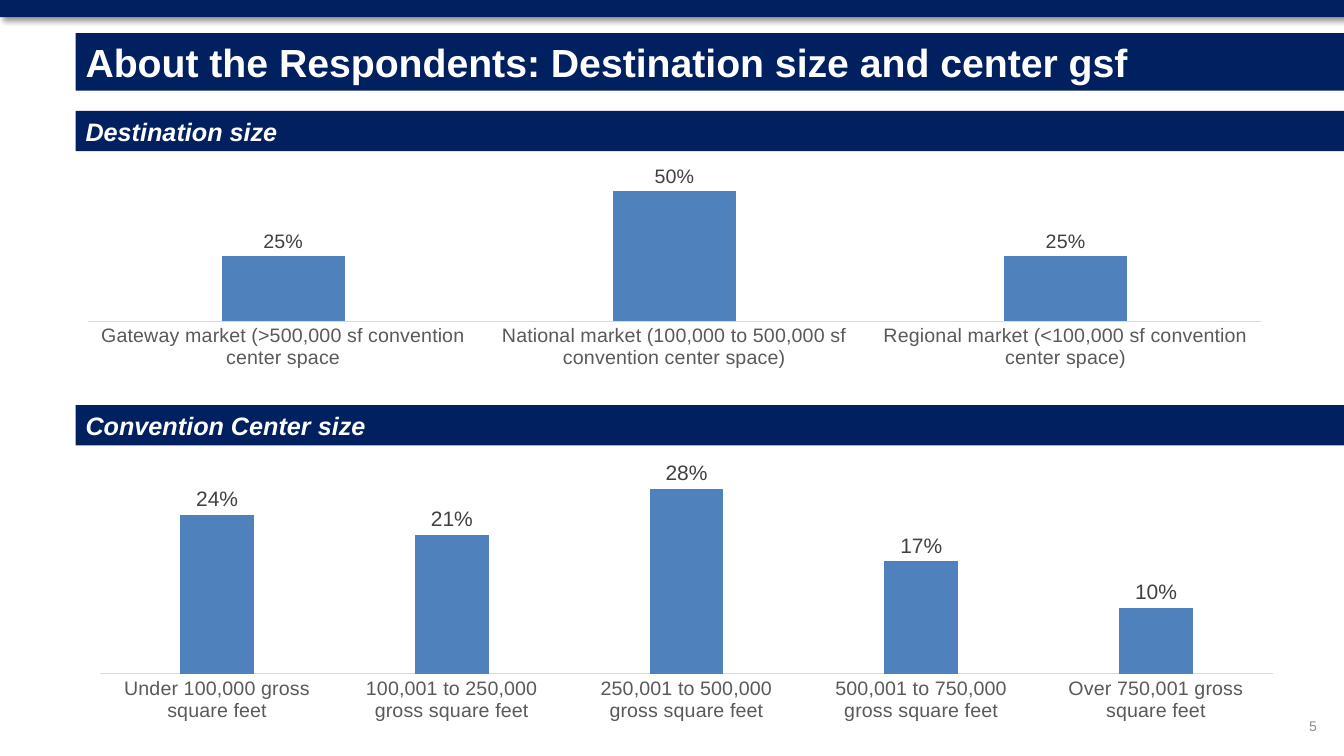
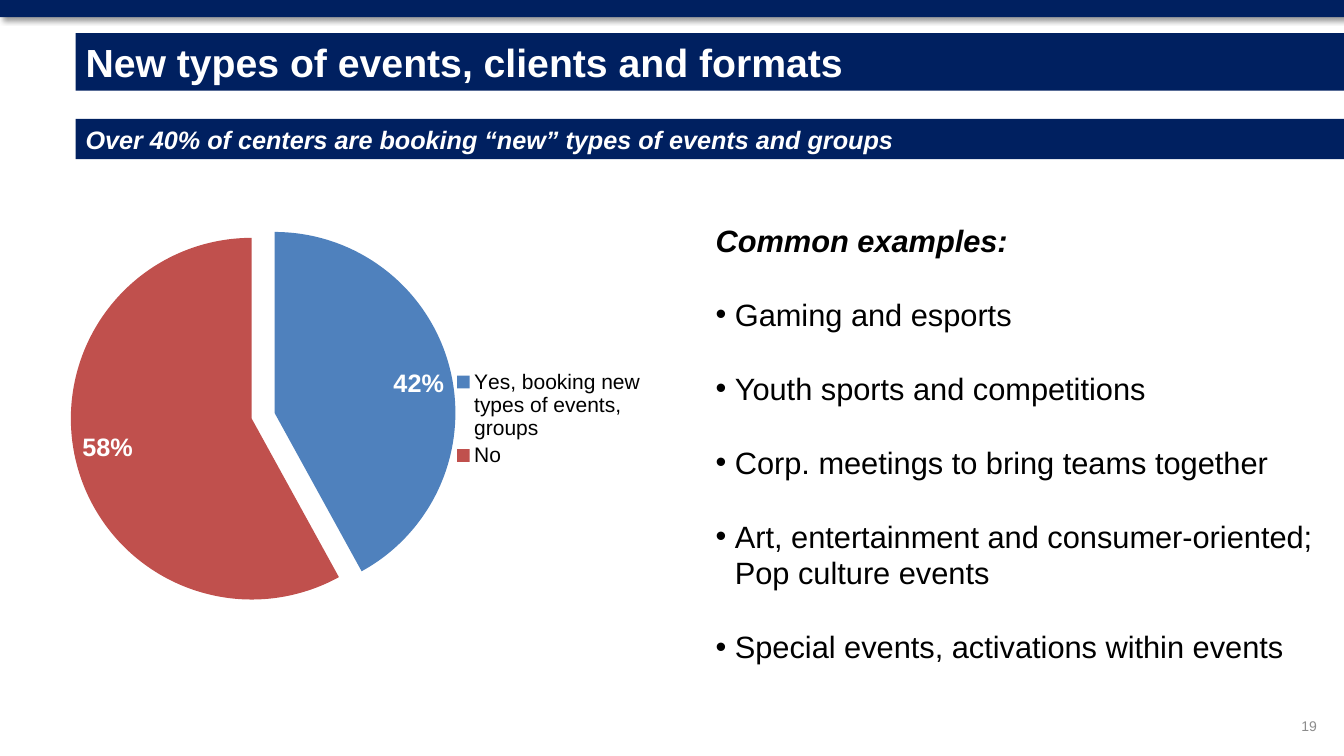
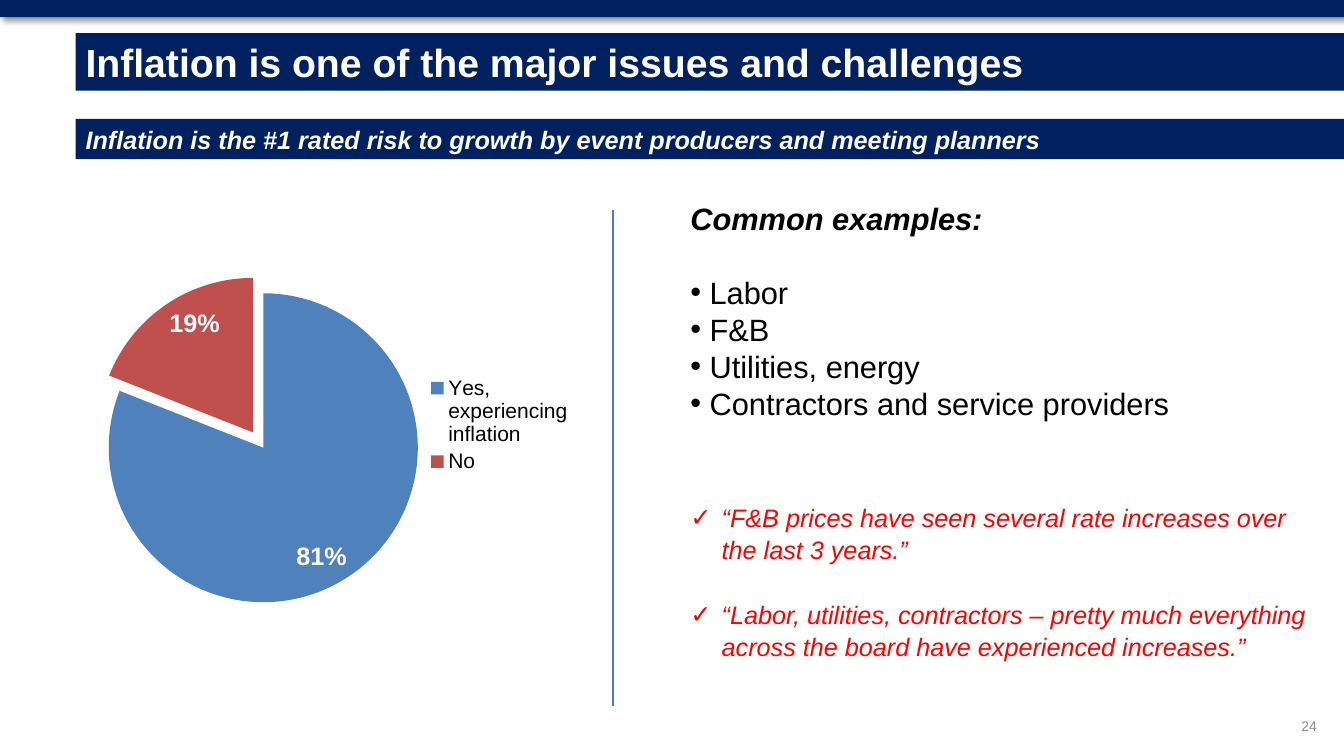
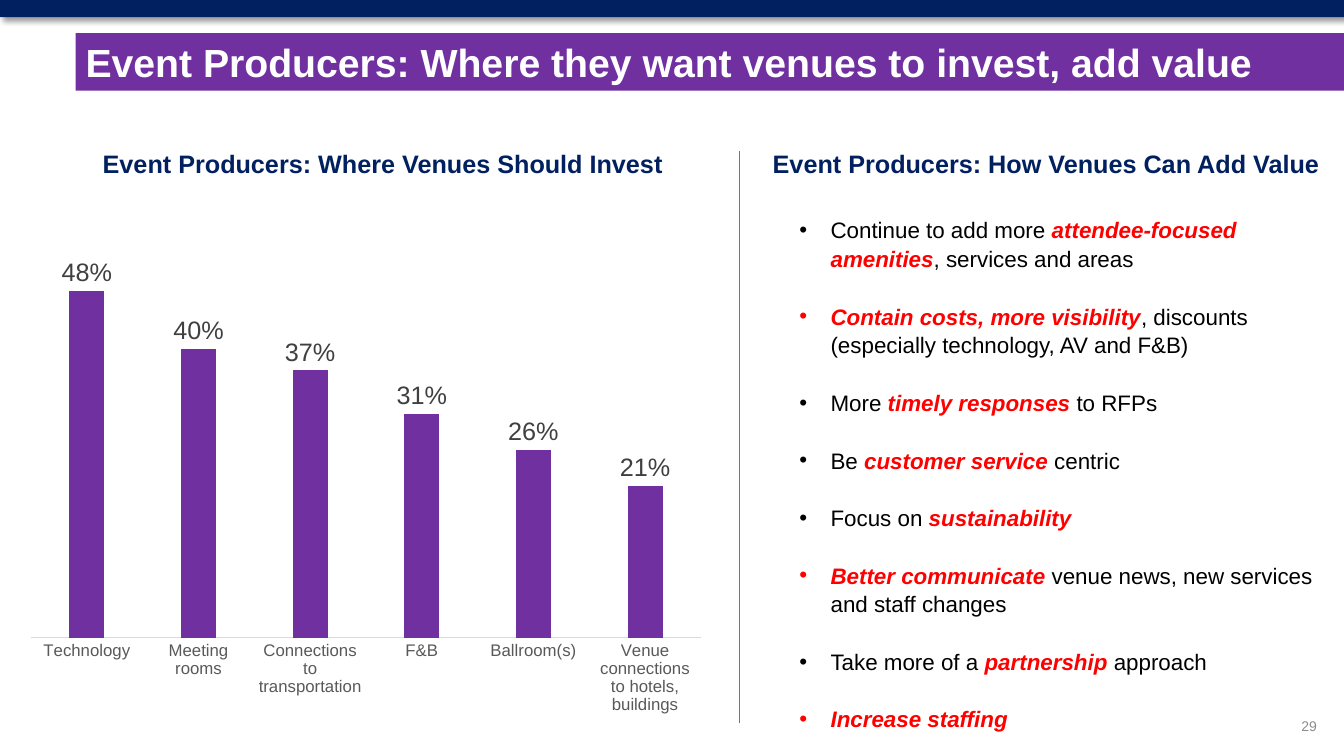
from dataclasses import dataclass

from lxml.etree import SubElement
from pptx import Presentation
from pptx.chart.data import CategoryChartData
from pptx.dml.color import RGBColor
from pptx.enum.chart import XL_CHART_TYPE, XL_LABEL_POSITION, XL_LEGEND_POSITION, XL_TICK_MARK
from pptx.enum.shapes import MSO_CONNECTOR, MSO_SHAPE
from pptx.enum.text import MSO_ANCHOR, PP_ALIGN
from pptx.oxml.ns import qn
from pptx.util import Inches, Pt

NAVY = RGBColor(0x00, 0x20, 0x60)
PURPLE = RGBColor(0x70, 0x30, 0xA0)
BLUE = RGBColor(0x4F, 0x81, 0xBD)
BRICK = RGBColor(0xC0, 0x50, 0x4D)
RULE_BLUE = RGBColor(0x4B, 0x7E, 0xBC)
RED = RGBColor(0xFF, 0x00, 0x00)
BLACK = RGBColor(0x00, 0x00, 0x00)
WHITE = RGBColor(0xFF, 0xFF, 0xFF)
LABEL_GRAY = RGBColor(0x40, 0x40, 0x40)
AXIS_GRAY = RGBColor(0x59, 0x59, 0x59)
AXIS_LINE = RGBColor(0xD9, 0xD9, 0xD9)
NUMBER_GRAY = RGBColor(0x8C, 0x8C, 0x8C)

FONT = "Arial"
SLIDE_WIDTH = 13.33
BAND_LEFT = 0.75
BAND_HEIGHT = 0.4
LINE_HEIGHT = 1.2
LOOSE = 1.07


@dataclass
class Item:
    """A paragraph: its runs of (text, emphasised), look, and blank lines before it."""
    runs: list
    size: int = 22
    color: RGBColor = BLACK
    bold: bool = False
    italic: bool = False
    bullet: str = ""
    indent: float = 0
    spacing: float = 1
    lines_before: float = 0


def style_font(font, size, color, bold=False, italic=False):
    """Set the shared typeface with a size, colour and weight."""
    font.name = FONT
    font.size = Pt(size)
    font.color.rgb = color
    font.bold = bold
    font.italic = italic


def add_run(paragraph, text, size, color, bold=False, italic=False):
    """Append one styled run to a paragraph."""
    run = paragraph.add_run()
    run.text = text
    style_font(run.font, size, color, bold, italic)


def add_rectangle(slide, left, top, width, height, fill):
    """Add a plain filled rectangle without outline or shadow."""
    shape = slide.shapes.add_shape(
        MSO_SHAPE.RECTANGLE, Inches(left), Inches(top), Inches(width), Inches(height))
    shape.fill.solid()
    shape.fill.fore_color.rgb = fill
    shape.line.fill.background()
    shape.shadow.inherit = False
    return shape


def add_label(slide, text, left, top, width, height, fill, size, color,
              italic=False, alignment=PP_ALIGN.LEFT):
    """Add a rectangle holding one bold line of text."""
    shape = add_rectangle(slide, left, top, width, height, fill)
    frame = shape.text_frame
    frame.word_wrap = True
    frame.vertical_anchor = MSO_ANCHOR.MIDDLE
    paragraph = frame.paragraphs[0]
    paragraph.alignment = alignment
    add_run(paragraph, text, size, color, True, italic)


def add_section_band(slide, text, top):
    """Add a navy band with an italic section heading."""
    add_label(slide, text, BAND_LEFT, top, SLIDE_WIDTH - BAND_LEFT, BAND_HEIGHT,
              NAVY, 18, WHITE, italic=True)


def add_column_heading(slide, text, left, width, alignment):
    """Add a navy heading above a column of content."""
    add_label(slide, text, left, 1.42, width, BAND_HEIGHT, WHITE, 18, NAVY,
              alignment=alignment)


def add_top_strip(slide):
    """Add the navy strip with its soft shadow along the top edge."""
    strip = add_rectangle(slide, 0, 0, SLIDE_WIDTH, 0.17, NAVY)
    effects = strip._element.spPr.find(qn("a:effectLst"))
    shadow = SubElement(effects, qn("a:outerShdw"), blurRad=str(Pt(4)), dist=str(Pt(3)),
                        dir="2700000", algn="tl", rotWithShape="0")
    color = SubElement(shadow, qn("a:srgbClr"), val="000000")
    SubElement(color, qn("a:alpha"), val="40000")


def add_page_number(slide, number):
    """Add the page number at the lower right."""
    box = slide.shapes.add_textbox(Inches(10.83), Inches(7), Inches(2.33), Inches(0.4))
    frame = box.text_frame
    frame.word_wrap = True
    frame.vertical_anchor = MSO_ANCHOR.MIDDLE
    frame.paragraphs[0].alignment = PP_ALIGN.RIGHT
    add_run(frame.paragraphs[0], str(number), 10, NUMBER_GRAY)


def start_slide(presentation, title, number, fill=NAVY):
    """Add a slide with the shared strip, page number and title band."""
    slide = presentation.slides.add_slide(presentation.slide_layouts[6])
    add_top_strip(slide)
    add_page_number(slide, number)
    add_label(slide, title, BAND_LEFT, 0.33, SLIDE_WIDTH - BAND_LEFT, 0.57, fill, 28, WHITE)
    return slide


def add_text_list(slide, left, top, width, height, items):
    """Add a text box with one paragraph for each item."""
    box = slide.shapes.add_textbox(Inches(left), Inches(top), Inches(width), Inches(height))
    frame = box.text_frame
    frame.word_wrap = True
    for index, item in enumerate(items):
        paragraph = frame.add_paragraph() if index else frame.paragraphs[0]
        line = item.size * LINE_HEIGHT * item.spacing
        paragraph.line_spacing = Pt(line)
        paragraph.space_before = Pt(line * item.lines_before)
        if item.bullet:
            properties = paragraph._p.get_or_add_pPr()
            properties.set("marL", str(Inches(item.indent)))
            properties.set("indent", str(-Inches(item.indent)))
            SubElement(properties, qn("a:buFont"), typeface=FONT)
            SubElement(properties, qn("a:buChar"), char=item.bullet)
        for text, emphasised in item.runs:
            add_run(paragraph, text, item.size, RED if emphasised else item.color,
                    item.bold or emphasised, item.italic or emphasised)


def examples_heading():
    """Return the heading item of a list of examples."""
    return Item([("Common examples:", False)], bold=True, italic=True)


def example(text, lines_before):
    """Return a large bulleted item."""
    return Item([(text, False)], bullet="•", indent=0.19, lines_before=lines_before)


def quote(text, lines_before):
    """Return a red italic quotation with a check mark."""
    return Item([(text, False)], size=18, color=RED, italic=True, bullet="✓",
                indent=0.31, spacing=LOOSE, lines_before=lines_before)


def add_divider(slide, x, top, bottom):
    """Add a thin vertical rule."""
    connector = slide.shapes.add_connector(
        MSO_CONNECTOR.STRAIGHT, Inches(x), Inches(top), Inches(x), Inches(bottom))
    connector.line.color.rgb = RULE_BLUE
    connector.line.width = Pt(0.75)
    SubElement(connector._element.spPr, qn("a:effectLst"))


def set_plot_layout(chart, bounds):
    """Place the inner plot area by fractions of the chart."""
    area = chart._chartSpace.chart.plotArea
    for old_layout in area.findall(qn("c:layout")):
        area.remove(old_layout)
    layout = SubElement(area, qn("c:layout"))
    area.insert(0, layout)
    manual = SubElement(layout, qn("c:manualLayout"))
    settings = [("layoutTarget", "inner"), ("xMode", "edge"), ("yMode", "edge")]
    settings += zip("xywh", bounds)
    for name, value in settings:
        SubElement(manual, qn(f"c:{name}"), val=str(value))


def add_percent_chart(slide, chart_type, box, values, plot_bounds):
    """Add a one-series chart of shares with value labels."""
    data = CategoryChartData(number_format="0%")
    data.categories = list(values)
    data.add_series("Series 1", list(values.values()))
    chart = slide.shapes.add_chart(chart_type, *map(Inches, box), data).chart
    chart.has_title = False
    chart.has_legend = False
    style_font(chart.font, 15, BLACK)
    set_plot_layout(chart, plot_bounds)
    plot = chart.plots[0]
    plot.has_data_labels = True
    labels = plot.data_labels
    labels.show_value = True
    labels.show_percentage = False
    labels.number_format = "0%"
    labels.number_format_is_linked = False
    return chart


def add_column_chart(slide, box, values, color, maximum, label_size, axis_size, plot_bounds):
    """Add a column chart that shows only its category axis."""
    chart = add_percent_chart(slide, XL_CHART_TYPE.COLUMN_CLUSTERED, box, values, plot_bounds)
    plot = chart.plots[0]
    plot.vary_by_categories = False
    plot.gap_width = 219
    plot.overlap = -27
    plot.data_labels.position = XL_LABEL_POSITION.OUTSIDE_END
    style_font(plot.data_labels.font, label_size, LABEL_GRAY)
    fill = plot.series[0].format.fill
    fill.solid()
    fill.fore_color.rgb = color
    value_axis = chart.value_axis
    value_axis.minimum_scale = 0
    value_axis.maximum_scale = maximum
    value_axis.has_major_gridlines = False
    value_axis.visible = False
    category_axis = chart.category_axis
    category_axis.major_tick_mark = XL_TICK_MARK.NONE
    category_axis.format.line.color.rgb = AXIS_LINE
    category_axis.format.line.width = Pt(0.75)
    style_font(category_axis.tick_labels.font, axis_size, AXIS_GRAY)


def add_pie_chart(slide, box, values, exploded, explosion, plot_bounds):
    """Add a two-part pie with one slice pulled out and a legend."""
    chart = add_percent_chart(slide, XL_CHART_TYPE.PIE, box, values, plot_bounds)
    plot = chart.plots[0]
    plot.vary_by_categories = True
    plot.data_labels.position = XL_LABEL_POSITION.INSIDE_END
    style_font(plot.data_labels.font, 18, WHITE, bold=True)
    for index, color in enumerate((BLUE, BRICK)):
        point = plot.series[0].points[index]
        point.format.fill.solid()
        point.format.fill.fore_color.rgb = color
    slice_element = plot.series[0]._element.findall(qn("c:dPt"))[exploded]
    explosion_element = SubElement(slice_element, qn("c:explosion"), val=str(explosion))
    slice_element.find(qn("c:spPr")).addprevious(explosion_element)
    chart.has_legend = True
    chart.legend.position = XL_LEGEND_POSITION.RIGHT
    chart.legend.include_in_layout = False
    style_font(chart.legend.font, 15, BLACK)


def add_respondents_slide(presentation):
    """Build the slide on destination and center sizes."""
    slide = start_slide(presentation, "About the Respondents: Destination size and center gsf", 5)
    add_section_band(slide, "Destination size", 1.1)
    add_column_chart(slide, (0.75, 1.58, 12, 2.08), {
        "Gateway market (>500,000 sf convention center space": 0.25,
        "National market (100,000 to 500,000 sf convention center space)": 0.5,
        "Regional market (<100,000 sf convention center space)": 0.25,
    }, BLUE, 0.6, 14, 14, (0.01, 0.03, 0.97, 0.75))
    add_section_band(slide, "Convention Center size", 4.02)
    add_column_chart(slide, (0.87, 4.58, 12, 2.58), {
        "Under 100,000 gross square feet": 0.24,
        "100,001 to 250,000 gross square feet": 0.21,
        "250,001 to 500,000 gross square feet": 0.28,
        "500,001 to 750,000 gross square feet": 0.17,
        "Over 750,001 gross square feet": 0.1,
    }, BLUE, 0.3, 15, 14, (0.01, 0.05, 0.97, 0.77))


def add_new_events_slide(presentation):
    """Build the slide on new types of events."""
    slide = start_slide(presentation, "New types of events, clients and formats", 19)
    add_section_band(
        slide, "Over 40% of centers are booking “new” types of events and groups", 1.18)
    add_pie_chart(slide, (0.57, 1.73, 5.93, 4.85),
                  {"Yes, booking new types of events, groups": 0.42, "No": 0.58},
                  0, 13, (0.02, 0.13, 0.61, 0.74))
    examples = (
        "Gaming and esports",
        "Youth sports and competitions",
        "Corp. meetings to bring teams together",
        "Art, entertainment and consumer-oriented; Pop culture events",
        "Special events, activations within events",
    )
    add_text_list(slide, 7, 2.15, 6.25, 4.91,
                  [examples_heading()] + [example(text, 1) for text in examples])


def add_inflation_slide(presentation):
    """Build the slide on inflation."""
    slide = start_slide(presentation, "Inflation is one of the major issues and challenges", 24)
    add_section_band(
        slide,
        "Inflation is the #1 rated risk to growth by event producers and meeting planners", 1.18)
    add_pie_chart(slide, (0.67, 1.68, 5.11, 5.07),
                  {"Yes, experiencing inflation": 0.81, "No": 0.19},
                  1, 12, (0.08, 0.24, 0.6, 0.61))
    add_text_list(slide, 6.75, 1.93, 6.33, 4.71, [
        examples_heading(),
        example("Labor", 1),
        example("F&B", 0),
        example("Utilities, energy", 0),
        example("Contractors and service providers", 0),
        quote("“F&B prices have seen several rate increases over the last 3 years.”", 2.44),
        quote("“Labor, utilities, contractors – pretty much everything across the board "
              "have experienced increases.”", 1),
    ])
    add_divider(slide, 6.08, 2.08, 7)


def add_producers_slide(presentation):
    """Build the slide on what event producers want."""
    slide = start_slide(
        presentation, "Event Producers: Where they want venues to invest, add value", 29, PURPLE)
    add_column_chart(slide, (0.17, 1.92, 6.92, 5.25), {
        "Technology": 0.48,
        "Meeting rooms": 0.4,
        "Connections to transportation": 0.37,
        "F&B": 0.31,
        "Ballroom(s)": 0.26,
        "Venue connections to hotels, buildings": 0.21,
    }, PURPLE, 0.6, 18, 12, (0.02, 0.02, 0.96, 0.82))
    add_column_heading(slide, "Event Producers: Where Venues Should Invest",
                       0.92, 5.92, PP_ALIGN.LEFT)
    add_divider(slide, 7.33, 1.5, 7.17)
    add_column_heading(slide, "Event Producers: How Venues Can Add Value",
                       7.5, 5.75, PP_ALIGN.CENTER)
    suggestions = (
        [("Continue to add more ", False), ("attendee-focused amenities", True),
         (", services and areas", False)],
        [("Contain costs, more visibility", True),
         (", discounts (especially technology, AV and F&B)", False)],
        [("More ", False), ("timely responses ", True), ("to RFPs", False)],
        [("Be ", False), ("customer service ", True), ("centric", False)],
        [("Focus on ", False), ("sustainability", True)],
        [("Better communicate ", True), ("venue news, new services and staff changes", False)],
        [("Take more of a ", False), ("partnership ", True), ("approach", False)],
        [("Increase staffing", True)],
    )
    add_text_list(slide, 7.83, 2.08, 5.33, 5.27, [
        Item(runs, size=16, bullet="•", indent=0.31, spacing=LOOSE, lines_before=min(index, 1))
        for index, runs in enumerate(suggestions)])


def main():
    """Build and save the presentation."""
    presentation = Presentation()
    presentation.slide_width = Inches(SLIDE_WIDTH)
    presentation.slide_height = Inches(7.5)
    add_respondents_slide(presentation)
    add_new_events_slide(presentation)
    add_inflation_slide(presentation)
    add_producers_slide(presentation)
    presentation.save("out.pptx")


if __name__ == "__main__":
    main()
